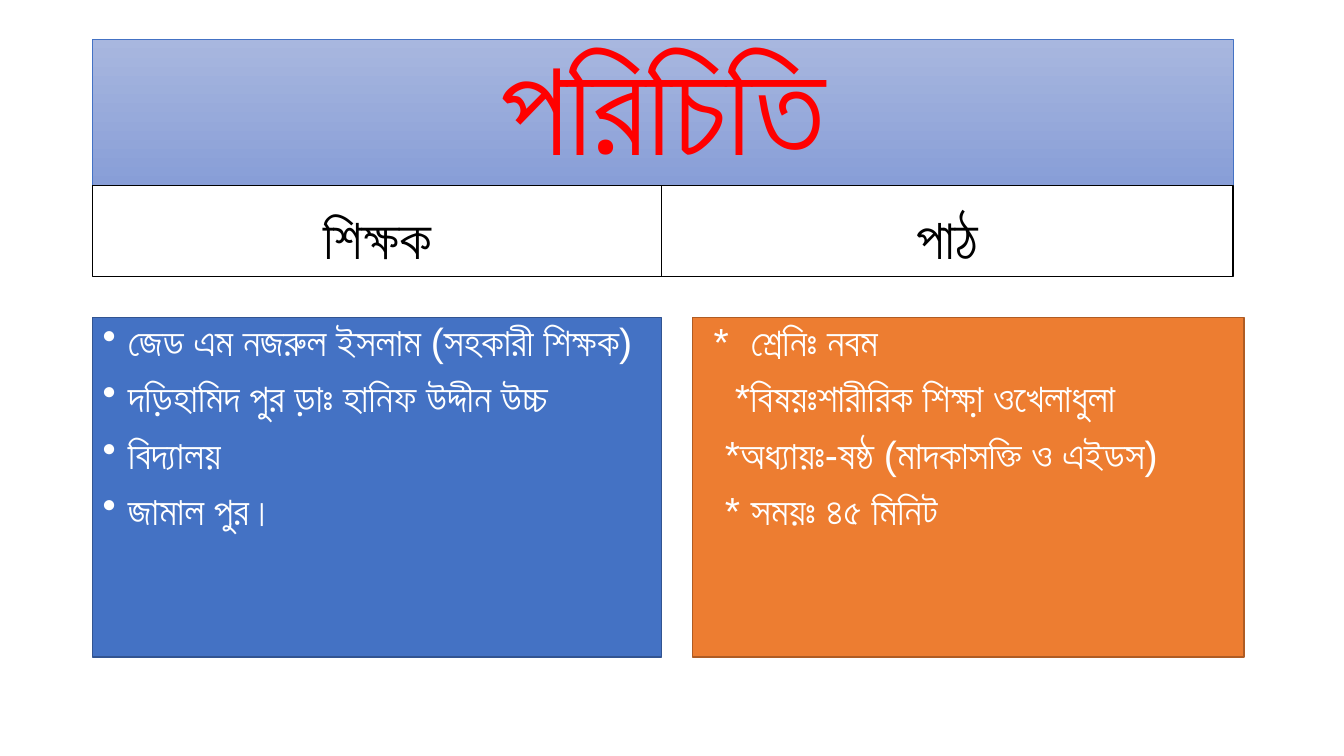
"""Build the introduction slide: a title band, two headings and two coloured panels."""
import pptx
import pptx.util
import pptx.dml.color
import pptx.enum.shapes
import pptx.enum.text
import lxml.etree

Inches, Pt = pptx.util.Inches, pptx.util.Pt
RGB = pptx.dml.color.RGBColor.from_string
ALIGN = pptx.enum.text.PP_ALIGN
ANCHOR = pptx.enum.text.MSO_ANCHOR
COLORS = {
    "band_top": "A8B7DF", "band_bottom": "889ED7", "band_line": "4472C4",
    "title": "FF0000", "black": "000000", "white": "FFFFFF",
    "teacher": "4472C4", "teacher_line": "325491",
    "lesson": "ED7D31", "lesson_line": "AF5C24",
}

prs = pptx.Presentation()
prs.slide_width, prs.slide_height = Inches(13.33), Inches(7.5)
s = prs.slides.add_slide(prs.slide_layouts[6])


def add_box(at, fill, line, width, anchor):
    """Add a rectangle and return it."""
    sp = s.shapes.add_shape(pptx.enum.shapes.MSO_SHAPE.RECTANGLE, *map(Inches, at))
    sp.shadow.inherit = False
    if fill:
        sp.fill.solid()
        sp.fill.fore_color.rgb = RGB(COLORS[fill])
    else:
        sp.fill.background()
    sp.line.color.rgb = RGB(COLORS[line])
    sp.line.width = Pt(width)
    sp.text_frame.word_wrap = True
    sp.text_frame.vertical_anchor = anchor
    return sp


def add_line(tf, index, text, align, color, font, bullet=None, left=0, indent=0):
    """Write one paragraph with its bullet, indent and font."""
    p = tf.paragraphs[0] if index == 0 else tf.add_paragraph()
    p.alignment = align
    p.line_spacing = 0.9
    p.space_before = Pt(10 if index else 0)
    pPr = p._p.get_or_add_pPr()
    pPr.set("marL", str(Inches(left)))
    pPr.set("indent", str(Inches(indent)))
    if bullet:
        bu = lxml.etree.SubElement(pPr, pptx.oxml.ns.qn("a:buChar"))
        bu.set("char", bullet)
    r = p.add_run()
    r.text = text
    for name, value in font.items():
        setattr(r.font, name, value)
    r.font.color.rgb = RGB(COLORS[color])


title = add_box((0.92, 0.39, 11.31, 1.45), "band_top", "band_line", 0.5, ANCHOR.MIDDLE)
title.fill.gradient()
title.fill.gradient_angle = 270
for stop, name in zip(title.fill.gradient_stops, ("band_top", "band_bottom")):
    stop.color.rgb = RGB(COLORS[name])
add_line(title.text_frame, 0, "পরিচিতি", ALIGN.CENTER, "title",
         {"name": "Arial", "size": Pt(96)})

heading_font = {"name": "Calibri", "size": Pt(40), "bold": True}
for x, w, text in ((0.92, 5.64, "শিক্ষক"), (6.56, 5.67, "পাঠ")):
    sp = add_box((x, 1.84, w, 0.9), None, "black", 0.75, ANCHOR.BOTTOM)
    add_line(sp.text_frame, 0, text, ALIGN.CENTER, "black", heading_font)

teacher_lines = [
    (text, "•", 0.25, -0.25) for text in (
        "জেড এম নজরুল ইসলাম (সহকারী শিক্ষক)",
        "দড়িহামিদ পুর ড়াঃ হানিফ উদ্দীন উচ্চ",
        "বিদ্যালয়",
        "জামাল পুর।",
    )
]
lesson_lines = [
    ("*\tশ্রেনিঃ নবম", None, 0.48, -0.37),
    ("*বিষয়ঃশারীরিক শিক্ষা় ওখেলাধুলা", None, 0.32, 0),
    ("*অধ্যায়ঃ-ষষ্ঠ (মাদকাসক্তি ও এইডস)", None, 0.22, 0),
    ("* সময়ঃ ৪৫ মিনিট", None, 0.22, 0),
]
body_font = {"name": "Arial", "size": Pt(28)}
for x, w, name, lines in ((0.92, 5.64, "teacher", teacher_lines),
                          (6.87, 5.47, "lesson", lesson_lines)):
    sp = add_box((x, 3.15, w, 3.37), name, name + "_line", 1, ANCHOR.TOP)
    for i, (text, bullet, left, indent) in enumerate(lines):
        add_line(sp.text_frame, i, text, ALIGN.LEFT, "white", body_font,
                 bullet, left, indent)

prs.save("out.pptx")
